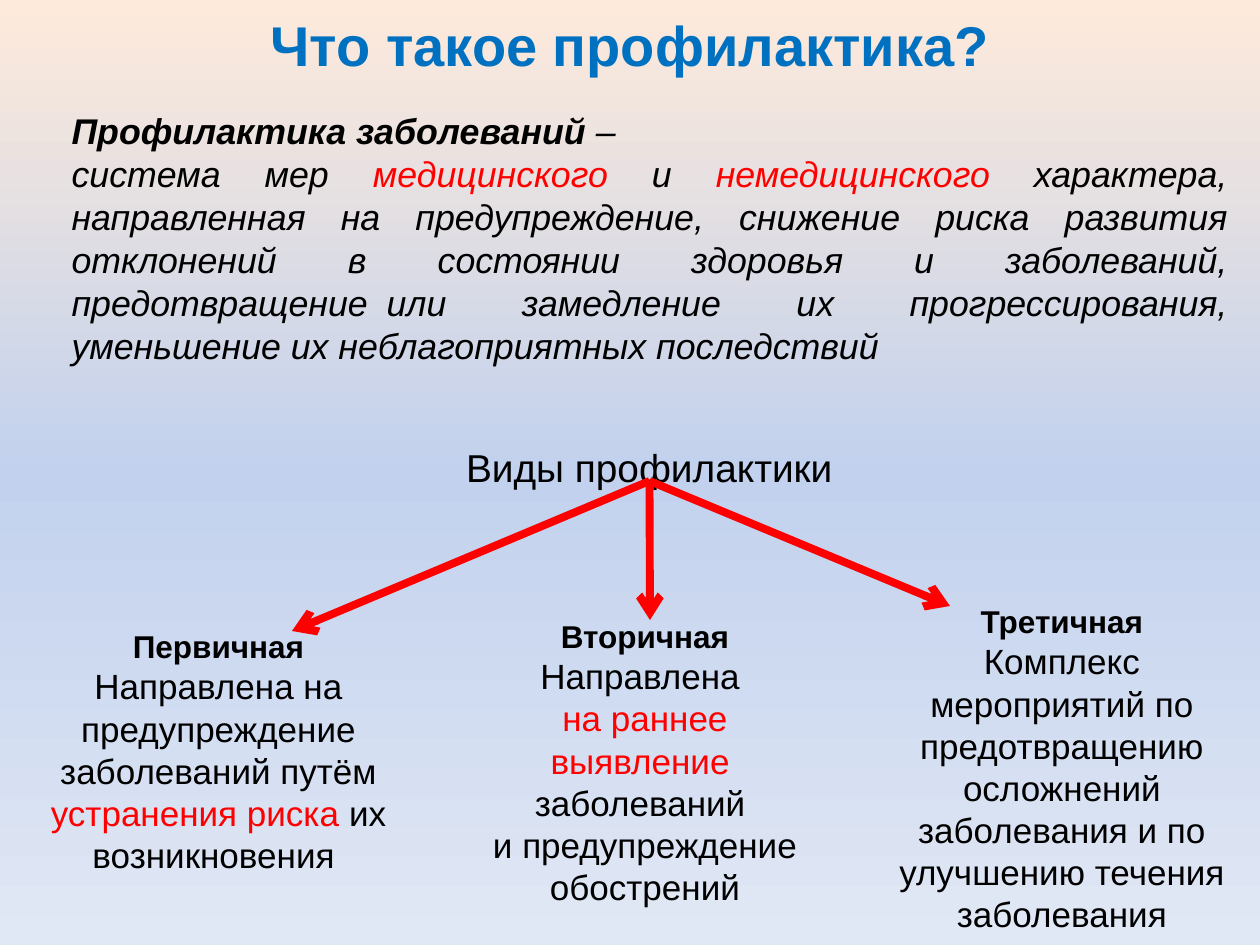
from lxml import etree
from pptx import Presentation
from pptx import util as u
from pptx.dml.color import RGBColor
from pptx.enum import shapes, text
from pptx.oxml import parse_xml
from pptx.oxml.ns import nsdecls, qn

PX = 914400 / 126
BLACK = RGBColor(0x00, 0x00, 0x00)
RED = RGBColor(0xFF, 0x00, 0x00)
BLUE = RGBColor(0x00, 0x70, 0xC0)
BACKGROUND = [(0, RGBColor(0xFD, 0xEA, 0xDA)), (50, RGBColor(0xC2, 0xD1, 0xED)),
              (100, RGBColor(0xE1, 0xE8, 0xF5))]


def place(sp, *box):
    sp.left, sp.top, sp.width, sp.height = [round(v * PX) for v in box]


def add_text(p, align, runs, size, bold=False, italic=False):
    p.alignment = align
    p.space_before = u.Pt(0)
    for words, color in runs:
        r = p.add_run()
        r.text = words
        r.font.name = "Arial"
        r.font.size = u.Pt(size)
        r.font.bold = bold
        r.font.italic = italic
        r.font.color.rgb = color


CENTER, JUSTIFY = text.PP_ALIGN.CENTER, text.PP_ALIGN.JUSTIFY

prs = Presentation()
prs.slide_width, prs.slide_height = u.Inches(10), u.Inches(7.5)
s = prs.slides.add_slide(prs.slide_layouts[1])

# Background gradient, top to bottom
fill = s.background.fill
fill.gradient()
fill.gradient_angle = 270
stops = s.background._cSld.find(".//" + qn("a:gsLst"))
for stop in list(stops):
    stops.remove(stop)
for percent, color in BACKGROUND:
    stops.append(parse_xml(f'<a:gs {nsdecls("a")} pos="{percent * 1000}">'
                           f'<a:srgbClr val="{color}"/></a:gs>'))

# Title
title = s.shapes.title
place(title, 0, -35, 1260, 158)
tf = title.text_frame
tf.auto_size = text.MSO_AUTO_SIZE.NONE
tf.vertical_anchor = text.MSO_ANCHOR.MIDDLE
add_text(tf.paragraphs[0], CENTER, [("Что такое профилактика?", BLUE)], 32, bold=True)

# Definition and the heading of the scheme
body = s.placeholders[1]
place(body, 59, 103, 1181, 378)
tf = body.text_frame
tf.auto_size = text.MSO_AUTO_SIZE.NONE
term = tf.paragraphs[0]
add_text(term, JUSTIFY, [("Профилактика заболеваний", BLACK)], 20.4, bold=True, italic=True)
add_text(term, JUSTIFY, [(" – ", BLACK)], 20.4, italic=True)
definition = tf.add_paragraph()
add_text(definition, JUSTIFY, [
    ("система мер ", BLACK), ("медицинского ", RED), ("и ", BLACK), ("немедицинского", RED),
    (" характера, направленная на предупреждение, снижение риска развития отклонений "
     "в состоянии здоровья и заболеваний, предотвращение\tили замедление их "
     "прогрессирования, уменьшение их неблагоприятных последствий", BLACK),
], 20.4, italic=True)
heading = tf.add_paragraph()
add_text(heading, CENTER, [("Виды профилактики", BLACK)], 22.2)
heading.space_before = u.Pt(44)

for p in tf.paragraphs:
    pPr = p._p.get_or_add_pPr()
    pPr.set("marL", "0")
    pPr.set("indent", "0")
    etree.SubElement(pPr, qn("a:buNone"))
tabs = etree.SubElement(definition._p.pPr, qn("a:tabLst"))
etree.SubElement(tabs, qn("a:tab"), pos=str(round(506 * PX)), algn="l")

# Three kinds of prevention
FIT, FIXED = text.MSO_AUTO_SIZE.SHAPE_TO_FIT_TEXT, text.MSO_AUTO_SIZE.NONE
kinds = [
    ((25, 621, 387, 276), FIT, "Первичная", [
        [("Направлена на", BLACK)],
        [("предупреждение заболеваний путём ", BLACK), ("устранения риска ", RED),
         ("их возникновения ", BLACK)]]),
    ((471, 611, 348, 318), FIT, "Вторичная", [
        [("Направлена ", BLACK)],
        [("на раннее выявление ", RED)],
        [("заболеваний ", BLACK)],
        [("и предупреждение обострений", BLACK)]]),
    ((866, 596, 392, 328), FIXED, "Третичная", [
        [("Комплекс мероприятий по предотвращению осложнений заболевания "
          "и по улучшению течения заболевания", BLACK)]]),
]
for box, auto_size, name, paragraphs in kinds:
    sp = s.shapes.add_textbox(0, 0, 0, 0)
    place(sp, *box)
    tf = sp.text_frame
    tf.word_wrap = True
    tf.auto_size = auto_size
    add_text(tf.paragraphs[0], CENTER, [(name, BLACK)], 18, bold=True)
    for runs in paragraphs:
        add_text(tf.add_paragraph(), CENTER, runs, 20)

# Arrows from the heading to each kind
for x, y in [(292, 631), (650, 620), (950, 606)]:
    arrow = s.shapes.add_connector(shapes.MSO_CONNECTOR.STRAIGHT, 0, 0,
                                   round(x * PX), round(y * PX))
    arrow.begin_connect(body, 2)
    arrow.line.color.rgb = RED
    arrow.line.width = u.Pt(4.5)
    etree.SubElement(arrow.line._get_or_add_ln(), qn("a:tailEnd"), type="arrow")
    etree.SubElement(arrow._element.spPr, qn("a:effectLst"))

prs.save("out.pptx")
